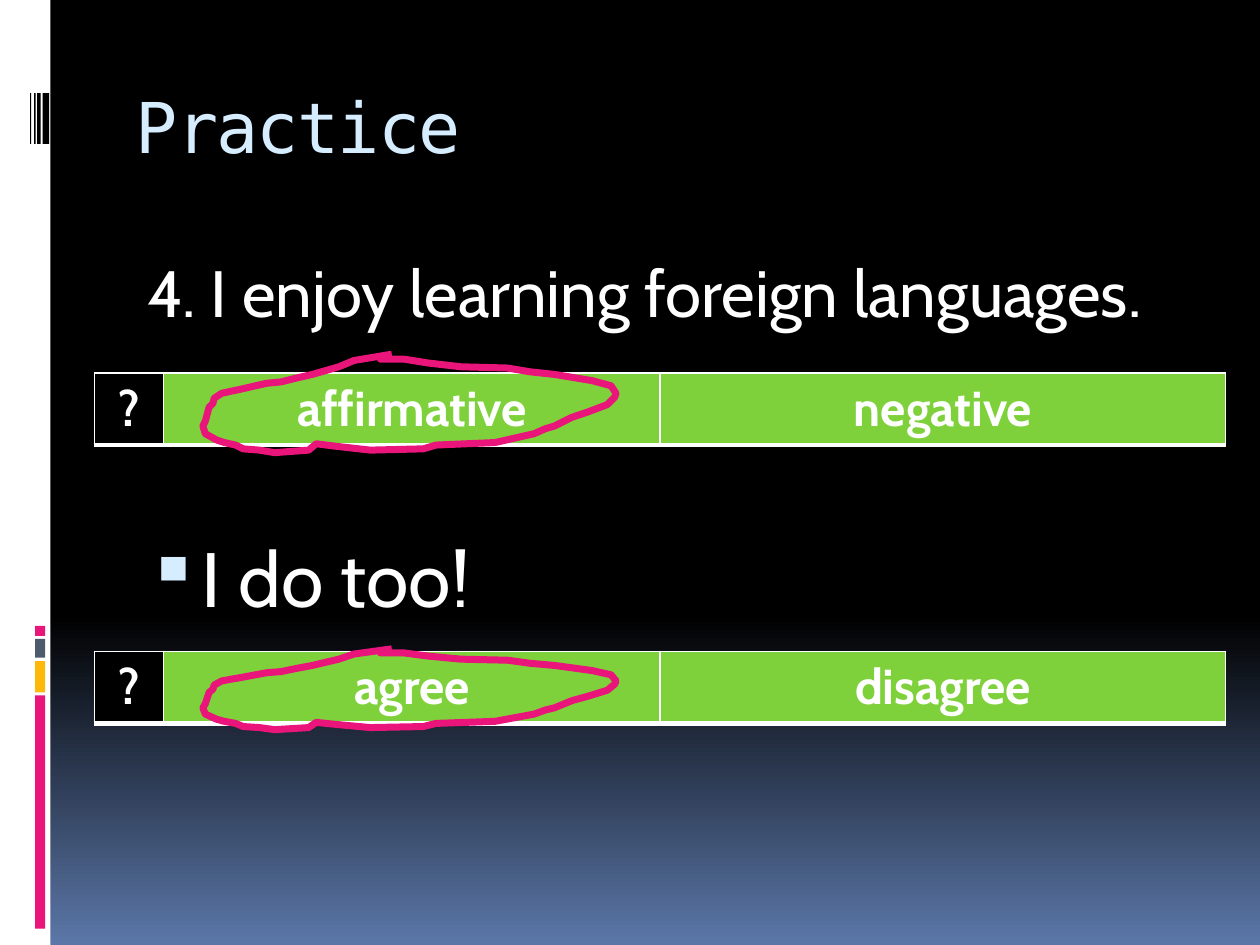
from pptx import Presentation
from pptx.dml.color import RGBColor
from pptx.enum.shapes import MSO_SHAPE
from pptx.enum.text import MSO_ANCHOR, PP_ALIGN
from pptx.oxml import parse_xml
from pptx.oxml.ns import nsdecls
from pptx.util import Cm, Pt


def rgb(value):
    return RGBColor.from_string(value)


def style(p, text, font, size, color, bold=False):
    p.text = text
    p.font.name = font
    p.font.size = Pt(size)
    p.font.bold = bold
    p.font.color.rgb = rgb(color)


PINK, GREEN, ICE = "EA157A", "7FD13B", "D6ECFF"

prs = Presentation()
prs.slide_width, prs.slide_height = Cm(25.4), Cm(19.05)
s = prs.slides.add_slide(prs.slide_layouts[6])

fill = s.background.fill
fill.gradient()
fill.gradient_angle = 270
for stop, position, color in zip(fill.gradient_stops, (0.65, 1), ("000000", "5B77A8")):
    stop.position = position
    stop.color.rgb = rgb(color)

bars = [
    (0, 0, 1.02, 19.05, "FFFFFF"),
    (0.71, 14.02, 0.2, 4.7, PINK),
    (0.71, 13.33, 0.2, 0.63, "FEB80A"),
    (0.71, 12.88, 0.2, 0.38, "4E5B6F"),
    (0.71, 12.62, 0.2, 0.2, PINK),
    (0.86, 1.88, 0.13, 1.02, "000000"),
    (0.75, 1.88, 0.07, 1.02, "000000"),
    (0.69, 1.88, 0.03, 1.02, "000000"),
    (0.61, 1.88, 0.02, 1.02, "000000"),
]
for x, y, w, h, color in bars:
    sp = s.shapes.add_shape(MSO_SHAPE.RECTANGLE, Cm(x), Cm(y), Cm(w), Cm(h))
    sp.shadow.inherit = False
    sp.fill.solid()
    sp.fill.fore_color.rgb = rgb(color)
    sp.line.fill.background()

texts = [
    ("Practice", 1.55, 0, "DejaVu Sans Mono", 40, ICE),
    ("4. I enjoy learning foreign languages.", 4.95, 0.18, "Cabin", 37.4, "FFFFFF"),
    ("I do too!", 10.57, 1.14, "Cabin", 44, "FFFFFF"),
]
for text, y, indent, font, size, color in texts:
    tf = s.shapes.add_textbox(Cm(2.54), Cm(y), Cm(21.59), Cm(2.56)).text_frame
    tf.word_wrap = True
    tf.vertical_anchor = MSO_ANCHOR.TOP
    p = tf.paragraphs[0]
    style(p, text, font, size, color)
    pPr = p._p.get_or_add_pPr()
    pPr.set("marL", str(Cm(indent)))
    if text == "Practice":
        tf.margin_left = Cm(0.2)
        pPr.defRPr.set("spc", "-100") if hasattr(pPr, "defRPr") else None
    else:
        p.space_before = Pt(7)
    if indent > 1:
        pPr.set("indent", str(-Cm(0.97)))
        for bullet in (
            f'<a:buClr {nsdecls("a")}><a:srgbClr val="{ICE}"/></a:buClr>',
            f'<a:buSzPct {nsdecls("a")} val="95000"/>',
            f'<a:buChar {nsdecls("a")} char="▪"/>',
        ):
            pPr[-1].addprevious(parse_xml(bullet))

loop = [
    (150, 0), (120, 5), (108, 10), (87, 16), (74, 19), (62, 22), (51, 23), (42, 25),
    (29, 28), (24, 29), (15, 31), (9, 35), (8, 39), (5, 42), (2, 53), (0, 57),
    (2, 63), (11, 68), (17, 70), (26, 72), (32, 75), (45, 76), (57, 78), (84, 76),
    (90, 71), (106, 73), (133, 76), (175, 75), (185, 72), (232, 70), (263, 63),
    (272, 59), (279, 57), (293, 50), (305, 46), (321, 40), (327, 34), (328, 31),
    (324, 25), (309, 21), (297, 19), (279, 16), (260, 14), (242, 11), (205, 10),
    (179, 7), (160, 4), (141, 4), (141, 1),
]
rounds = [
    (7.52, ("?", "affirmative", "negative"), 7.14, 2.01),
    (13.13, ("?", "agree", "disagree"), 13.08, 1.65),
]
for y, words, loop_y, loop_h in rounds:
    frame = s.shapes.add_table(1, 3, Cm(1.9), Cm(y), Cm(22.81), Cm(1.45))
    table = frame.table
    for column, width in zip(table.columns, (1.4, 10.01, 11.4)):
        column.width = Cm(width)
    for cell, word in zip(table.rows[0].cells, words):
        tcPr = cell._tc.get_or_add_tcPr()
        for side, width in (("L", 1), ("R", 1), ("T", 1), ("B", 3)):
            tcPr.append(parse_xml(
                f'<a:ln{side} {nsdecls("a")} w="{Pt(width)}"><a:solidFill>'
                f'<a:srgbClr val="FFFFFF"/></a:solidFill></a:ln{side}>'))
        cell.fill.solid()
        cell.fill.fore_color.rgb = rgb("000000" if word == "?" else GREEN)
        p = cell.text_frame.paragraphs[0]
        p.alignment = PP_ALIGN.CENTER
        style(p, word, "Cabin", 28, "FFFFFF", True)

    scale = (Cm(8.33) / 328, Cm(loop_h) / 79)
    fb = s.shapes.build_freeform(*loop[0], scale=scale)
    fb.add_line_segments(loop[1:], close=False)
    sp = fb.convert_to_shape(Cm(4.09), Cm(loop_y))
    sp.shadow.inherit = False
    sp.fill.background()
    sp.line.color.rgb = rgb(PINK)
    sp.line.width = Pt(4)

prs.save("out.pptx")
